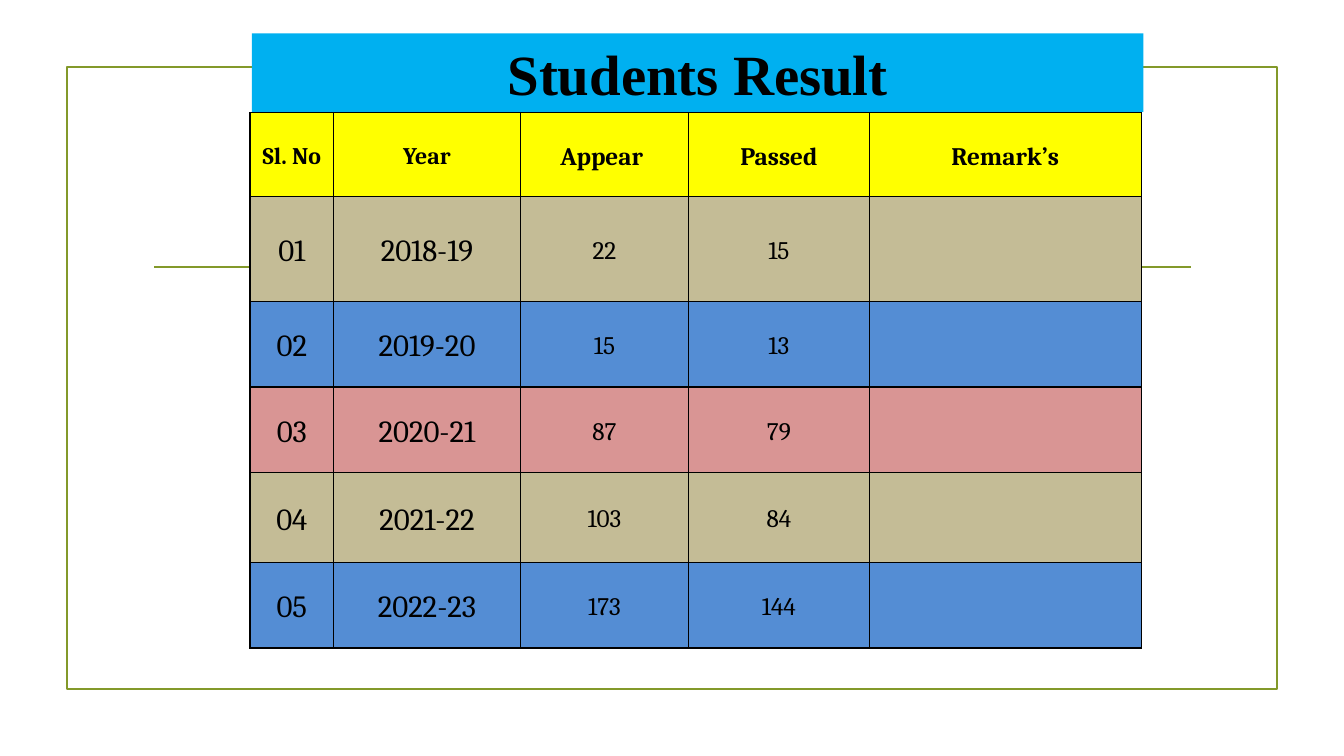
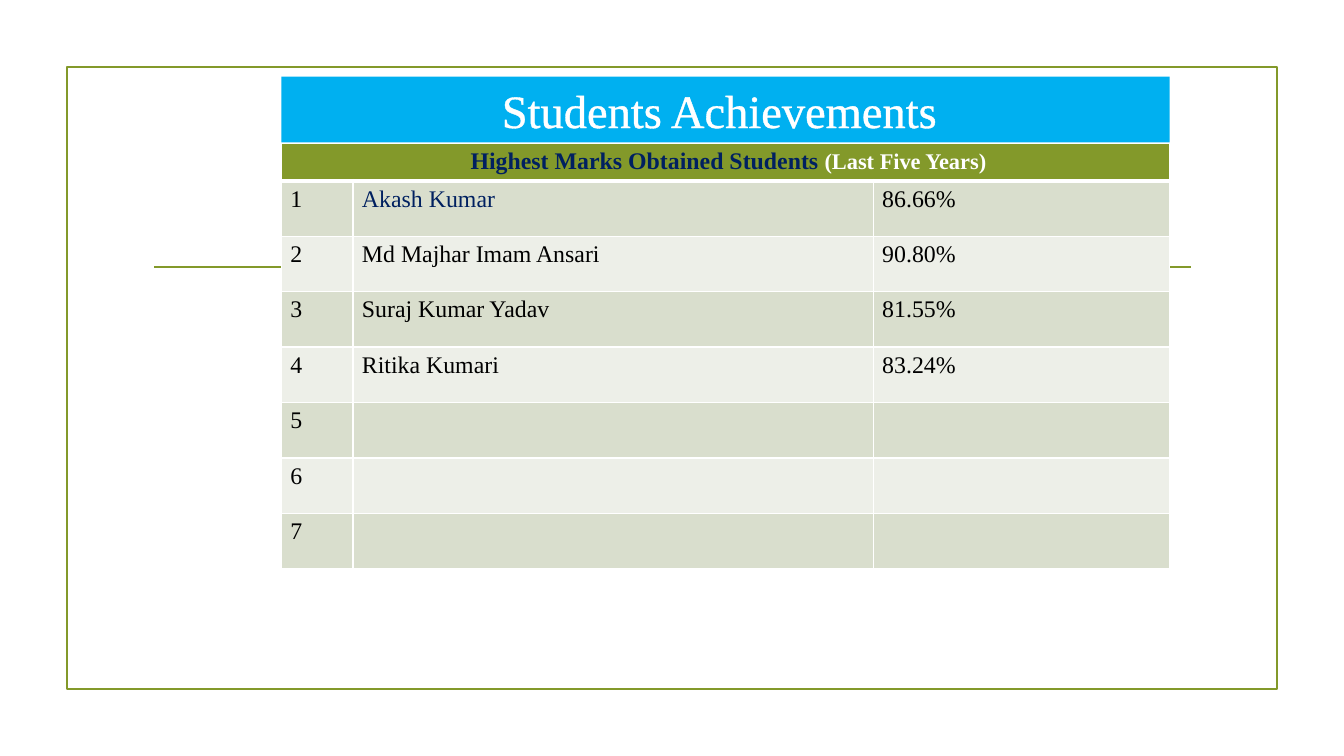
from dataclasses import dataclass

import lxml.etree
import pptx
import pptx.dml.color
import pptx.enum.shapes
import pptx.enum.text
import pptx.oxml.ns
import pptx.presentation
import pptx.slide
import pptx.table
import pptx.text.text
import pptx.util

COLORS = {
    "olive": "83992A", "sky": "00B0F0", "black": "000000", "white": "FFFFFF",
    "navy": "002060", "yellow": "FFFF00", "tan": "C4BC96", "blue": "548DD4",
    "rose": "D99594", "sage": "D9DECD", "mist": "EDEFE8",
}
SERIF, CAMBRIA = "Times New Roman", "Cambria"
WIDTH, HEIGHT = pptx.util.Inches(13.33), pptx.util.Inches(7.5)
CENTER = pptx.enum.text.PP_ALIGN.CENTER
LEFT = pptx.enum.text.PP_ALIGN.LEFT
MIDDLE = pptx.enum.text.MSO_ANCHOR.MIDDLE
TOP = pptx.enum.text.MSO_ANCHOR.TOP


@dataclass(frozen=True)
class Box:
    left: float
    top: float
    width: float
    height: float

    def place(self) -> tuple[int, int, int, int]:
        return x(self.left), y(self.top), x(self.width), y(self.height)


@dataclass(frozen=True)
class Run:
    text: str
    size: float
    color: str = "black"
    bold: bool = False
    font: str = SERIF


@dataclass(frozen=True)
class Row:
    height: float
    fill: str
    cells: list[list[Run]]
    align: pptx.enum.text.PP_ALIGN = CENTER


@dataclass(frozen=True)
class TableStyle:
    border: str
    anchor: pptx.enum.text.MSO_ANCHOR
    inset_x: float
    inset_y: float
    line_spacing: float = 1.0
    header_rule: float = 1.0


RESULT_STYLE = TableStyle("black", MIDDLE, 0.06, 0, 1.15)
MARKS_STYLE = TableStyle("white", TOP, 0.09, 0.05, header_rule=3)

FRAME = Box(5, 8.9, 90, 82.2)
RULE_LEFT, RULE_RIGHT, RULE_TOP = 11.48, 88.6, 35.33

RESULT_COLS = [6.23, 13.88, 12.53, 13.43, 20.25]
RESULT_HEADS = ["Sl. No", "Year", "Appear ", "Passed", "Remark’s"]
RESULTS = [
    (13.87, "tan", "2018-19", "22", "15"),
    (11.33, "blue", "2019-20", "15", "13"),
    (11.33, "rose", "2020-21", "87", "79"),
    (11.87, "tan", "2021-22", "103", "84"),
    (11.33, "blue", "2022-23", "173", "144"),
]

MARKS_COLS = [5.33, 38.71, 22.06]
MARKS_ROWS = 7
MARKS = [
    ("Akash Kumar", "86.66%"),
    ("Md Majhar Imam Ansari", "90.80%"),
    ("Suraj Kumar Yadav", "81.55%"),
    ("Ritika Kumari", "83.24%"),
]


def x(percent: float) -> int:
    return round(WIDTH * percent / 100)


def y(percent: float) -> int:
    return round(HEIGHT * percent / 100)


def rgb(name: str) -> pptx.dml.color.RGBColor:
    return pptx.dml.color.RGBColor.from_string(COLORS[name])


def line_xml(tag: str, color: str, points: float) -> lxml.etree._Element:
    ln = lxml.etree.Element(pptx.oxml.ns.qn(tag), w=str(pptx.util.Pt(points)))
    fill = lxml.etree.SubElement(ln, pptx.oxml.ns.qn("a:solidFill"))
    lxml.etree.SubElement(fill, pptx.oxml.ns.qn("a:srgbClr"), val=COLORS[color])
    return ln


def write(p: pptx.text.text._Paragraph, runs: list[Run]) -> None:
    p.text = runs[0].text
    for extra in runs[1:]:
        p.add_run().text = extra.text
    for r, run in zip(p.runs, runs):
        r.font.name = run.font
        r.font.size = pptx.util.Pt(run.size)
        r.font.bold = run.bold
        r.font.color.rgb = rgb(run.color)


def add_frame(slide: pptx.slide.Slide) -> None:
    sp = slide.shapes.add_shape(
        pptx.enum.shapes.MSO_SHAPE.RECTANGLE, *FRAME.place())
    sp.shadow.inherit = False
    sp.fill.background()
    rule = slide.shapes.add_connector(
        pptx.enum.shapes.MSO_CONNECTOR.STRAIGHT,
        x(RULE_LEFT), y(RULE_TOP), x(RULE_RIGHT), y(RULE_TOP))
    lxml.etree.SubElement(
        rule.element.spPr, pptx.oxml.ns.qn("a:effectLst"))
    for shape in (sp, rule):
        shape.line.color.rgb = rgb("olive")
        shape.line.width = pptx.util.Pt(1.25)


def add_slide(prs: pptx.presentation.Presentation, box: Box,
              title: Run, outline: float = 0) -> pptx.slide.Slide:
    slide = prs.slides.add_slide(prs.slide_layouts[5])
    add_frame(slide)
    sp = slide.shapes.title
    sp.element.getparent().append(sp.element)
    sp.left, sp.top, sp.width, sp.height = box.place()
    sp.fill.solid()
    sp.fill.fore_color.rgb = rgb("sky")
    tf = sp.text_frame
    tf.word_wrap = True
    tf.auto_size = pptx.enum.text.MSO_AUTO_SIZE.NONE
    tf.vertical_anchor = MIDDLE
    p = tf.paragraphs[0]
    p.alignment = CENTER
    write(p, [title])
    if outline:
        p.runs[0].font._element.insert(0, line_xml("a:ln", title.color, outline))
    return slide


def format_cell(cell: pptx.table._Cell, row: Row, style: TableStyle,
                top: float, bottom: float) -> None:
    cell.fill.solid()
    cell.fill.fore_color.rgb = rgb(row.fill)
    cell.vertical_anchor = style.anchor
    cell.margin_left = cell.margin_right = pptx.util.Inches(style.inset_x)
    cell.margin_top = cell.margin_bottom = pptx.util.Inches(style.inset_y)
    borders = {"a:lnL": 1, "a:lnR": 1, "a:lnT": top, "a:lnB": bottom}
    tcPr = cell._tc.get_or_add_tcPr()
    for i, (tag, points) in enumerate(borders.items()):
        tcPr.insert(i, line_xml(tag, style.border, points))


def add_table(slide: pptx.slide.Slide, left: float, top: float,
              cols: list[float], rows: list[Row], style: TableStyle) -> None:
    box = Box(left, top, sum(cols), sum(row.height for row in rows))
    table = slide.shapes.add_table(len(rows), len(cols), *box.place()).table
    table.first_row = table.horz_banding = False
    for column, width in zip(table.columns, cols):
        column.width = x(width)
    for i, row in enumerate(rows):
        table.rows[i].height = y(row.height)
        above = style.header_rule if i == 1 else 1
        below = style.header_rule if i == 0 else 1
        for j in range(len(cols)):
            format_cell(table.cell(i, j), row, style, above, below)
        if len(row.cells) == 1:
            table.cell(i, 0).merge(table.cell(i, len(cols) - 1))
        for j, runs in enumerate(row.cells):
            p = table.cell(i, j).text_frame.paragraphs[0]
            p.alignment = row.align
            p.line_spacing = style.line_spacing
            write(p, runs)


def result_cells(texts: list[str], lead_size: float,
                 bold: bool = False) -> list[list[Run]]:
    return [[Run(text, lead_size if j < 2 else 18, bold=bold, font=CAMBRIA)]
            for j, text in enumerate(texts)]


def result_slide(prs: pptx.presentation.Presentation) -> None:
    slide = add_slide(prs, Box(18.75, 4.4, 66.32, 10.4),
                      Run("Students Result", 40.6, bold=True))
    rows = [Row(11.07, "yellow", result_cells(RESULT_HEADS, 17, True))]
    for number, (height, fill, *values) in enumerate(RESULTS, 1):
        texts = [f"{number:02}", *values, ""]
        rows.append(Row(height, fill, result_cells(texts, 22)))
    add_table(slide, 18.6, 14.93, RESULT_COLS, rows, RESULT_STYLE)


def achievement_slide(prs: pptx.presentation.Presentation) -> None:
    slide = add_slide(prs, Box(20.93, 10.13, 66.1, 8.7),
                      Run("Students Achievements ", 33.2, "white"), 1.45)
    heading = [Run(" Highest Marks Obtained Students ", 17, "navy", True),
               Run("(Last Five Years)", 16, "white", True)]
    rows = [Row(4.97, "olive", [heading])]
    for i in range(MARKS_ROWS):
        name, mark = MARKS[i] if i < len(MARKS) else ("", "")
        cells = [[Run(str(i + 1), 17)],
                 [Run(name, 17, "black" if i else "navy")],
                 [Run(mark, 17)]]
        rows.append(Row(7.34, "mist" if i % 2 else "sage", cells, LEFT))
    add_table(slide, 20.93, 18.93, MARKS_COLS, rows, MARKS_STYLE)


def main() -> None:
    prs = pptx.Presentation()
    prs.slide_width, prs.slide_height = WIDTH, HEIGHT
    result_slide(prs)
    achievement_slide(prs)
    prs.save("out.pptx")


if __name__ == "__main__":
    main()
